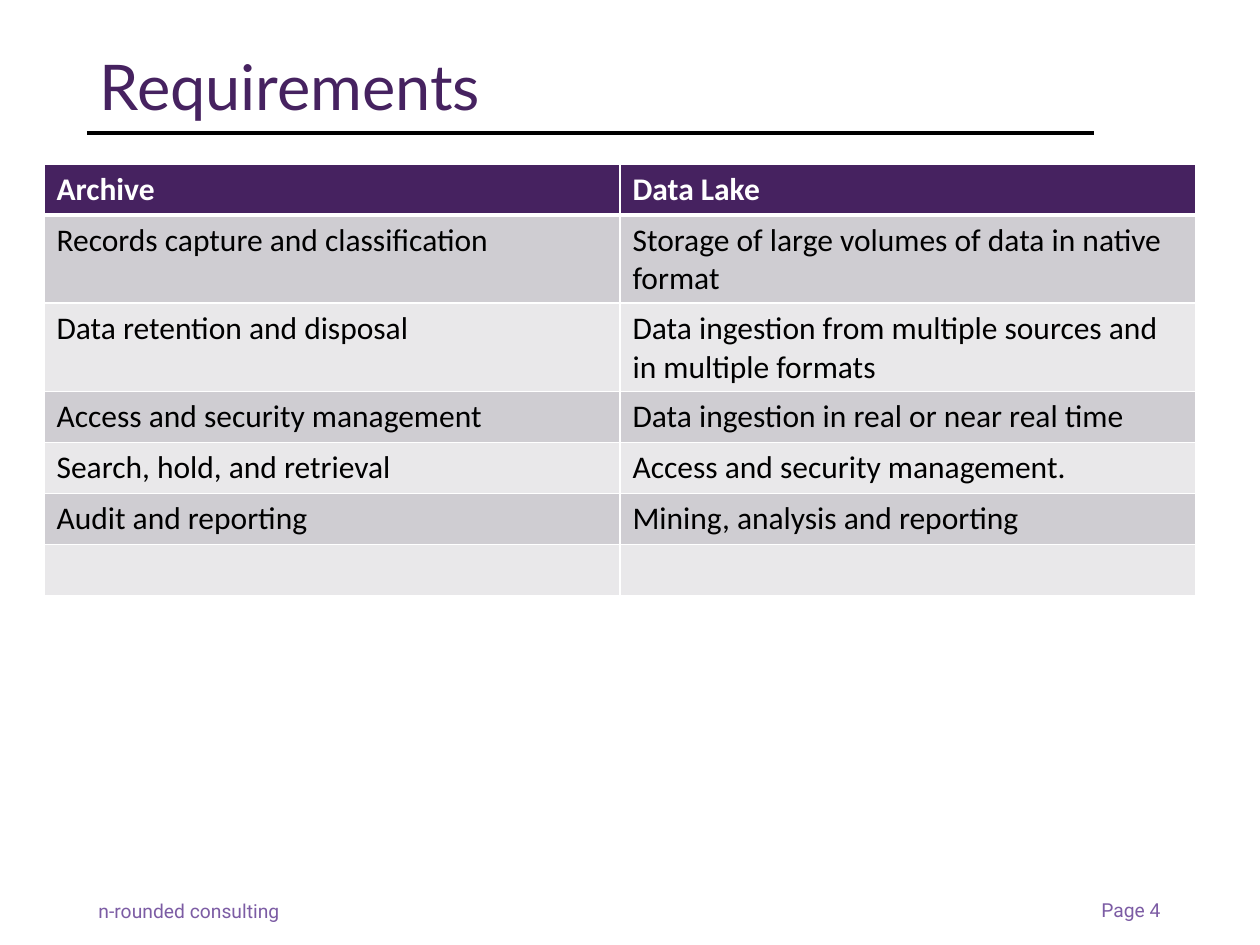
import dataclasses

import pptx
import pptx.dml.color
import pptx.enum.shapes
import pptx.enum.text
import pptx.oxml
import pptx.oxml.ns
import pptx.util

EMU_PER_PX = 914400 // 126
COLORS = {
    "purple": "462260",
    "lilac": "7C5CA4",
    "dark_band": "CFCDD2",
    "light_band": "E9E8EA",
    "black": "000000",
    "white": "FFFFFF",
}
REQUIREMENTS = [
    ("Archive", "Data Lake"),
    ("Records capture and classification",
     "Storage of large volumes of data in native format"),
    ("Data retention and disposal",
     "Data ingestion from multiple sources and in multiple formats"),
    ("Access and security management", "Data ingestion in real or near real time"),
    ("Search, hold, and retrieval", "Access and security management."),
    ("Audit and reporting", "Mining, analysis and reporting"),
    ("", ""),
]
ROW_HEIGHT = 51
COLUMN_WIDTH = 576
ALIGN = pptx.enum.text.PP_ALIGN


@dataclasses.dataclass(frozen=True)
class Box:
    left: int
    top: int
    width: int
    height: int

    def emu(self) -> list[int]:
        return [px(length) for length in dataclasses.astuple(self)]


@dataclasses.dataclass(frozen=True)
class FooterText:
    text: str
    box: Box
    align: ALIGN


FOOTERS = [
    FooterText("Page 4", Box(1033, 892, 140, 37), ALIGN.RIGHT),
    FooterText("n-rounded consulting", Box(86, 893, 209, 37), ALIGN.LEFT),
]


def px(length: int) -> int:
    return pptx.util.Emu(length * EMU_PER_PX)


def rgb(color: str) -> pptx.dml.color.RGBColor:
    return pptx.dml.color.RGBColor.from_string(COLORS[color])


def format_font(font, name: str, size: int, color: str, bold: bool = False) -> None:
    values = {"name": name, "size": pptx.util.Pt(size), "bold": bold}
    for attribute, value in values.items():
        setattr(font, attribute, value)
    font.color.rgb = rgb(color)


def add_title(slide) -> None:
    title = slide.shapes.title
    title.left, title.top, title.width, title.height = Box(87, 50, 1086, 80).emu()
    title.text_frame.text = "Requirements"
    title.text_frame.vertical_anchor = pptx.enum.text.MSO_ANCHOR.MIDDLE
    heading = title.text_frame.paragraphs[0]
    heading.alignment = ALIGN.LEFT
    heading.line_spacing = 0.9
    format_font(heading.runs[0].font, "Lato", 36, "purple")


def add_title_rule(slide) -> None:
    rule = slide.shapes.add_connector(
        pptx.enum.shapes.MSO_CONNECTOR.STRAIGHT, px(87), px(133), px(1094), px(133))
    rule.line.color.rgb = rgb("black")
    rule.line.width = pptx.util.Pt(2)
    effects = pptx.oxml.parse_xml(f"<a:effectLst {pptx.oxml.ns.nsdecls('a')}/>")
    rule._element.spPr.append(effects)


def add_footer(slide, footer: FooterText) -> None:
    frame = slide.shapes.add_textbox(*footer.box.emu()).text_frame
    frame.word_wrap = True
    frame.text = footer.text
    frame.paragraphs[0].alignment = footer.align
    format_font(frame.paragraphs[0].runs[0].font, "Roboto", 11, "lilac")


def add_borders(cell, widths: dict[str, int]) -> None:
    """Draw white borders; they precede the fill in the cell properties."""
    properties = cell._tc.get_or_add_tcPr()
    for index, (side, width) in enumerate(widths.items()):
        border = pptx.oxml.parse_xml(
            f'<a:ln{side} {pptx.oxml.ns.nsdecls("a")} w="{pptx.util.Pt(width)}">'
            f'<a:solidFill><a:srgbClr val="{COLORS["white"]}"/></a:solidFill>'
            f"</a:ln{side}>")
        properties.insert(index, border)


def format_cell(cell, text: str, row: int) -> None:
    is_header = row == 0
    band = "dark_band" if row % 2 else "light_band"
    cell.fill.solid()
    cell.fill.fore_color.rgb = rgb("purple" if is_header else band)
    add_borders(cell, {"L": 1, "R": 1, "T": 3 if row == 1 else 1,
                       "B": 3 if is_header else 1})
    if text:
        cell.text = text
        format_font(cell.text_frame.paragraphs[0].runs[0].font, "Calibri", 18,
                    "white" if is_header else "black", is_header)


def add_requirements_table(slide) -> None:
    row_count, column_count = len(REQUIREMENTS), len(REQUIREMENTS[0])
    box = Box(44, 164, COLUMN_WIDTH * column_count, ROW_HEIGHT * row_count)
    table = slide.shapes.add_table(row_count, column_count, *box.emu()).table
    for row, texts in enumerate(REQUIREMENTS):
        for column, text in enumerate(texts):
            format_cell(table.cell(row, column), text, row)


def main() -> None:
    presentation = pptx.Presentation()
    presentation.slide_width = pptx.util.Inches(10)
    presentation.slide_height = pptx.util.Inches(7.5)
    title_only = presentation.slide_layouts.get_by_name("Title Only")
    slide = presentation.slides.add_slide(title_only)
    for footer in FOOTERS:
        add_footer(slide, footer)
    add_title_rule(slide)
    add_title(slide)
    add_requirements_table(slide)
    presentation.save("out.pptx")


if __name__ == "__main__":
    main()
